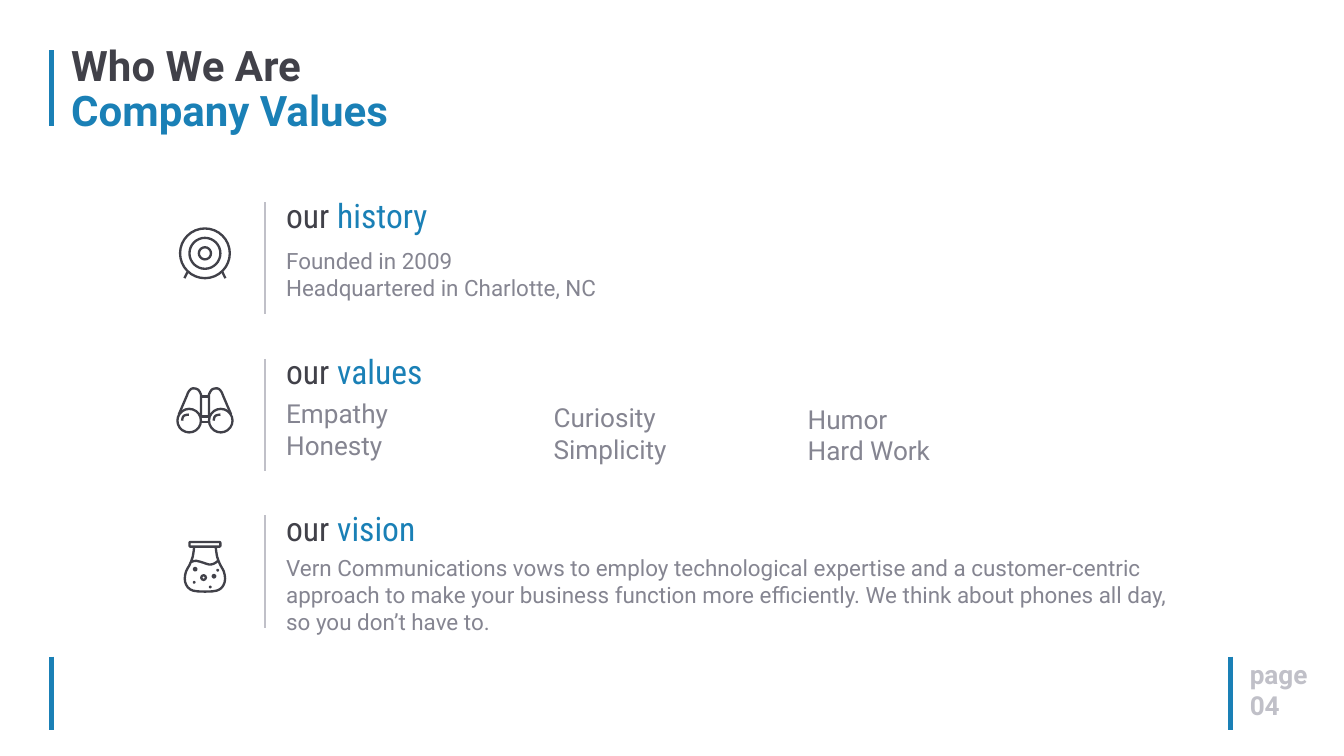
from dataclasses import dataclass
from math import cos, pi, sin

from lxml.etree import SubElement
from pptx import Presentation
from pptx.dml.color import RGBColor
from pptx.enum.shapes import MSO_CONNECTOR
from pptx.enum.text import MSO_ANCHOR, PP_ALIGN
from pptx.oxml.ns import qn
from pptx.util import Inches, Pt


@dataclass(frozen=True)
class Theme:
    dark: str = "414149"
    accent: str = "1A80B6"
    body: str = "858591"
    pale: str = "C0C0C8"
    font: str = "Roboto"
    heading_font: str = "Roboto Condensed"
    title_size: int = 45
    heading_size: int = 36
    list_size: int = 28
    body_size: int = 24
    accent_width: float = 5
    rule_width: float = 2
    icon_width: float = 2.5


THEME = Theme()

# Content
TITLE = ("Who We Are", "Company Values")
PAGE = ("page", "04")
SECTIONS = [
    {"word": "history", "icon": "target", "size": THEME.body_size,
     "blocks": [(0, 0.62, 13.59, 0.91, ["Founded in 2009", "Headquartered in Charlotte, NC"])]},
    {"word": "values", "icon": "binoculars", "size": THEME.list_size,
     "blocks": [(0, 0.53, 2.75, 1.04, ["Empathy", "Honesty"]),
                (3.98, 0.59, 2.75, 1.04, ["Curiosity", "Simplicity"]),
                (7.76, 0.61, 2.75, 1.04, ["Humor", "Hard Work"])]},
    {"word": "vision", "icon": "flask", "size": THEME.body_size,
     "blocks": [(0, 0.53, 13.59, 1.31, [
         "Vern Communications vows to employ technological expertise and a "
         "customer-centric approach to make your business function more efficiently. "
         "We think about phones all day, so you don’t have to."])]},
]


def mirrored(points):
    return [(-x, y) for x, y in points]


# Icons: hundredths of an inch from the icon centre; circles are x, y, radius
BARREL = [(-39, 7), (-27, -21), (-25, -26), (-21, -31), (-16, -32),
          (-10, -30), (-6, -23), (-6, -18), (-6, 12)]
GLINT = [(-34, 16), (-33, 11), (-30, 8), (-24, 7)]
GLASS = [(-16, -30), (-18, -15), (-23, -2), (-28, 7), (-30, 18),
         (-28, 27), (-22, 34), (-11, 37)]
NECK = [(-22, -36.5), (22, -36.5), (23, -35.5), (23, -30.5), (22, -29.5),
        (-22, -29.5), (-23, -30.5), (-23, -35.5), (-22, -36.5)]
LEG = [(-26, 28), (-30.5, 37)]
ICONS = {
    "target": {"circles": [(0, 0, 37), (0, 0, 23), (0, 0, 9)],
               "lines": [LEG, mirrored(LEG)]},
    "binoculars": {"circles": [(-23.5, 16, 17.5), (23.5, 16, 17.5)],
                   "lines": [[(-6, y), (6, y)] for y in (-20, 10, 18)],
                   "curves": [BARREL, mirrored(BARREL), GLINT,
                              [(x + 47, y) for x, y in GLINT]]},
    "flask": {"circles": [(-2, 16.5, 3.5), (-14.5, 4, 1.8), (13.5, 14.5, 1.8),
                          (-16, 23.5, 0.4), (19, 5.5, 0.4), (8, 30.5, 0.4)],
              "lines": [NECK],
              "curves": [GLASS + mirrored(GLASS)[::-1],
                         [(-20, -7), (-13, -8.5), (-2, -5.5), (6, -3), (13, -4), (19, -8)]]},
}

# Grid
WIDTH, HEIGHT = 20, 11.25
MARGIN, PAGE_RULE = 0.77, 18.31
ICON_X, RULE_X, TEXT_X = 3.05, 3.94, 4.16
FIRST_ROW, ROW_PITCH, RULE_HEIGHT = 3.01, 2.33, 1.67
ICON_DROP, HEADING_LIFT = 0.76, 0.16


def color(value):
    return RGBColor.from_string(value)


def add_line(slide, start, end, stroke, width):
    line = slide.shapes.add_connector(
        MSO_CONNECTOR.STRAIGHT, *(Inches(value) for value in (*start, *end)))
    line.line.color.rgb = color(stroke)
    line.line.width = Pt(width)
    SubElement(line._element.spPr, qn("a:effectLst"))


def write(frame, paragraphs, size, font=THEME.font, bold=False):
    """Fill a frame with paragraphs, each a list of (text, colour) runs."""
    frame.word_wrap = True
    for index, spans in enumerate(paragraphs):
        para = frame.paragraphs[0] if index == 0 else frame.add_paragraph()
        for text, tint in spans:
            if text == "\n":
                para.add_line_break()
                continue
            span = para.add_run()
            span.text = text
            span.font.name, span.font.size, span.font.bold = font, Pt(size), bold
            span.font.color.rgb = color(tint)


def add_text(slide, left, top, width, height, paragraphs, size, **style):
    box = slide.shapes.add_textbox(*(Inches(value) for value in (left, top, width, height)))
    write(box.text_frame, paragraphs, size, **style)


def circle(x, y, radius):
    """Return a closed outline, finer for larger circles."""
    sides = 32 if radius > 20 else 20 if radius > 5 else 8
    return [(x + radius * cos(2 * pi * side / sides), y + radius * sin(2 * pi * side / sides))
            for side in range(sides + 1)]


def smooth(points, steps=2):
    """Sample a Catmull-Rom curve through the points."""
    padded = [points[0], *points, points[-1]]
    curve = [points[0]]
    for a, b, c, d in zip(padded, padded[1:], padded[2:], padded[3:]):
        for step in range(1, steps + 1):
            t = step / steps
            curve.append(tuple(
                0.5 * (2 * q + (r - p) * t + (2 * p - 5 * q + 4 * r - s) * t ** 2
                       + (3 * q - p - 3 * r + s) * t ** 3)
                for p, q, r, s in zip(a, b, c, d)))
    return curve


def add_icon(slide, parts, center_x, center_y):
    """Draw all contours of an icon as one stroked outline."""
    contours = [circle(*ring) for ring in parts["circles"]]
    contours += parts["lines"]
    contours += [smooth(points) for points in parts.get("curves", [])]
    contours = [[(x * 100, y * 100) for x, y in contour] for contour in contours]
    builder = slide.shapes.build_freeform(*contours[0][0], scale=Inches(1) / 10000)
    for index, (start, *rest) in enumerate(contours):
        if index:
            builder.move_to(*start)
        builder.add_line_segments(rest, close=False)
    icon = builder.convert_to_shape(Inches(center_x), Inches(center_y))
    icon.shadow.inherit = False
    icon.fill.background()
    icon.line.color.rgb = color(THEME.dark)
    icon.line.width = Pt(THEME.icon_width)


def add_section(slide, section, top):
    add_line(slide, (RULE_X, top), (RULE_X, top + RULE_HEIGHT), THEME.pale, THEME.rule_width)
    add_icon(slide, ICONS[section["icon"]], ICON_X, top + ICON_DROP)
    add_text(slide, TEXT_X, top - HEADING_LIFT, 8.3, 0.71,
             [[("our ", THEME.dark), (section["word"], THEME.accent)]],
             THEME.heading_size, font=THEME.heading_font)
    for offset, drop, width, height, lines in section["blocks"]:
        add_text(slide, TEXT_X + offset, top + drop, width, height,
                 [[(line, THEME.body)] for line in lines], section["size"])


def main():
    deck = Presentation()
    deck.slide_width, deck.slide_height = Inches(WIDTH), Inches(HEIGHT)
    page = deck.slides.add_slide(deck.slide_layouts[5])

    # Title
    title = page.shapes.title
    title.left, title.top, title.width, title.height = map(Inches, (0.96, 0.62, 5.96, 1.46))
    title.text_frame.vertical_anchor = MSO_ANCHOR.TOP
    write(title.text_frame, [[(TITLE[0], THEME.dark), ("\n", ""), (TITLE[1], THEME.accent)]],
          THEME.title_size, bold=True)
    heading = title.text_frame.paragraphs[0]
    heading.alignment, heading.line_spacing = PP_ALIGN.LEFT, 0.9

    # Accent rules and page number
    for x, top, bottom in [(MARGIN, 0.75, 1.88), (MARGIN, 9.77, 10.86),
                           (PAGE_RULE, 9.77, 10.86)]:
        add_line(page, (x, top), (x, bottom), THEME.accent, THEME.accent_width)
    add_text(page, 18.5, 9.75, 1.5, 1.04, [[(line, THEME.pale)] for line in PAGE],
             THEME.list_size, bold=True)

    # Sections
    for row, section in enumerate(SECTIONS):
        add_section(page, section, FIRST_ROW + row * ROW_PITCH)

    deck.save("out.pptx")


if __name__ == "__main__":
    main()
